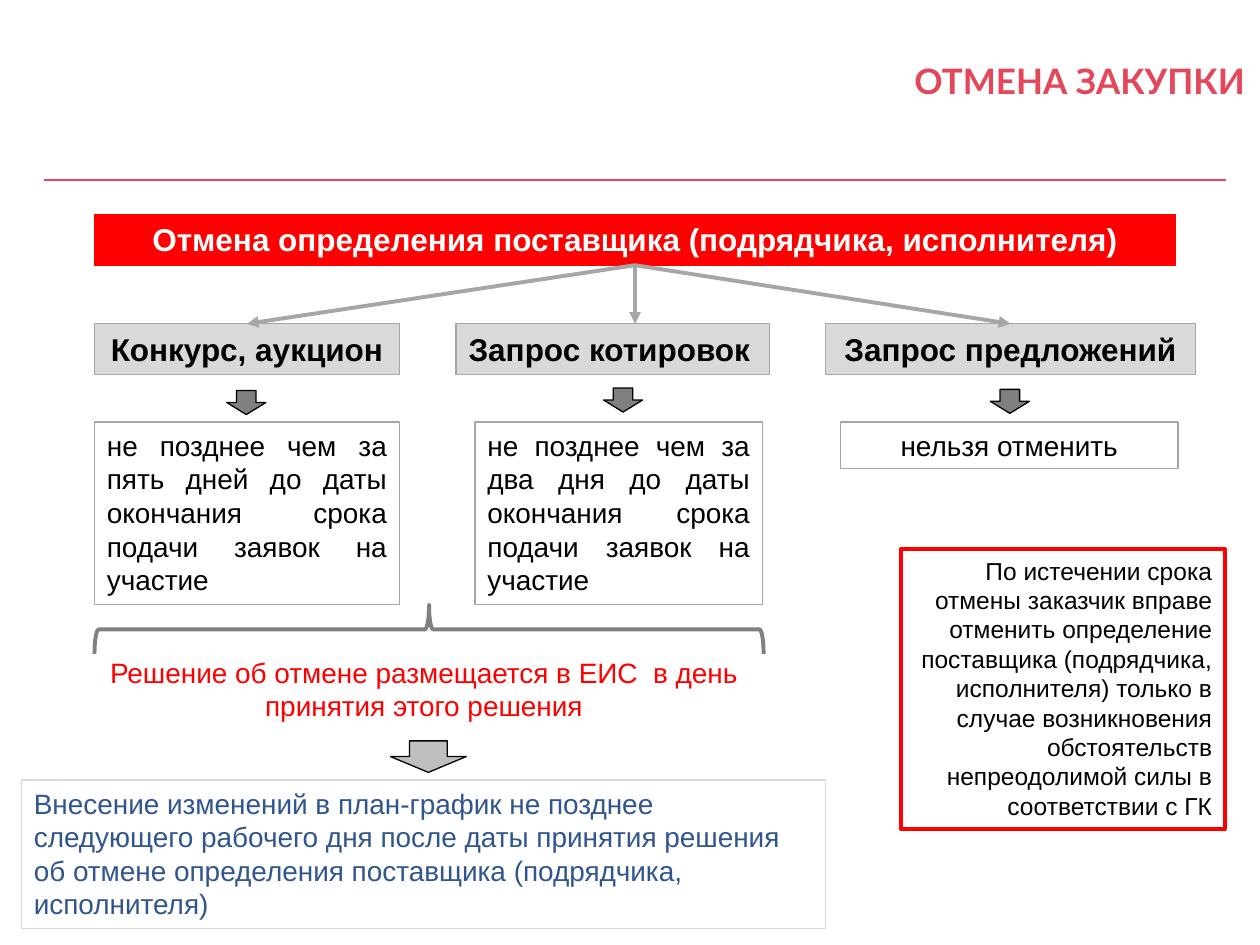
from dataclasses import dataclass

from lxml.etree import SubElement
from pptx import Presentation
from pptx.dml.color import RGBColor
from pptx.enum.shapes import MSO_CONNECTOR as Link, MSO_SHAPE as Form
from pptx.enum.text import MSO_ANCHOR as Anchor, PP_ALIGN as Align
from pptx.oxml.ns import qn
from pptx.util import Inches, Pt


@dataclass(frozen=True)
class Theme:
    """Colours, type sizes, fonts and line widths of the deck."""
    accent: str = "E4465A"
    red: str = "FF0000"
    blue: str = "31558F"
    white: str = "FFFFFF"
    black: str = "000000"
    pale: str = "D9D9D9"
    silver: str = "BFBFBF"
    edge: str = "A6A6A6"
    grey: str = "808080"
    title: int = 20
    heading: int = 18
    body: int = 16
    note: int = 14
    font: str = "Arial"
    title_font: str = "Lato"
    thin: float = 0.75
    rule: float = 1.5
    thick: float = 2.25


class Board:
    """Draws styled elements on one page laid out on a 100 by 75 grid."""

    def __init__(self, deck, theme):
        self.page = deck.slides.add_slide(deck.slide_layouts[6])
        self.theme = theme
        self.column = deck.slide_width / 100
        self.row = deck.slide_height / 75

    def place(self, left, top, width, height):
        """Turn grid lengths into slide lengths."""
        return (round(left * self.column), round(top * self.row),
                round(width * self.column), round(height * self.row))

    def shape(self, form, area, fill=None, line=None, weight=None):
        """Add a flat preset shape."""
        shape = self.page.shapes.add_shape(form, *self.place(*area))
        shape.shadow.inherit = False
        if fill:
            shape.fill.solid()
            shape.fill.fore_color.rgb = RGBColor.from_string(fill)
        else:
            shape.fill.background()
        if line:
            shape.line.color.rgb = RGBColor.from_string(line)
            shape.line.width = Pt(weight or self.theme.thin)
        else:
            shape.line.fill.background()
        return shape

    def set_text(self, box, text, size, color, align=Align.LEFT, bold=False, font=None):
        """Fill a box with one paragraph of text."""
        frame = box.text_frame
        frame.word_wrap = True
        frame.vertical_anchor = Anchor.TOP
        para = frame.paragraphs[0]
        para.text = text
        para.alignment = align
        para.font.size = Pt(size)
        para.font.bold = bold
        para.font.name = font or self.theme.font
        para.font.color.rgb = RGBColor.from_string(color)
        return para

    def box(self, area, text, size, color, align=Align.LEFT, bold=False,
            fill=None, line=None, weight=None):
        """Add a rectangle with text."""
        box = self.shape(Form.RECTANGLE, area, fill, line, weight)
        self.set_text(box, text, size, color, align, bold)
        return box

    def label(self, area, text, size, color, align, bold=False, font=None):
        """Add a plain text box."""
        box = self.page.shapes.add_textbox(*self.place(*area))
        return self.set_text(box, text, size, color, align, bold, font)

    def line(self, start, end, color, weight, arrow=False):
        """Add a straight line, with an arrowhead on request."""
        line = self.page.shapes.add_connector(
            Link.STRAIGHT, *self.place(*start, *end))
        line.line.color.rgb = RGBColor.from_string(color)
        line.line.width = Pt(weight)
        if arrow:
            SubElement(line.line._get_or_add_ln(), qn("a:tailEnd"), type="triangle")
        SubElement(line._element.spPr, qn("a:effectLst"))
        return line

    def arrow(self, area, fill):
        """Add a block arrow pointing down."""
        self.shape(Form.DOWN_ARROW, area, fill, self.theme.black)

    def brace(self, left, top, width, height, color, weight):
        """Add a brace lying on its side, with its tip up."""
        area = (left + (width - height) / 2, top + (height - width) / 2, height, width)
        self.shape(Form.LEFT_BRACE, area, None, color, weight).rotation = 90


def main():
    """Build the slide and save it."""
    deck = Presentation()
    deck.slide_width, deck.slide_height = Inches(10), Inches(7.5)
    theme = Theme()
    board = Board(deck, theme)

    board.line((3.5, 14.3), (97.3, 14.3), theme.accent, theme.rule)
    title = board.label((28.2, 3.6, 71.6, 9.9), "ОТМЕНА ЗАКУПКИ", theme.title,
                        theme.accent, Align.RIGHT, True, theme.title_font)
    title.line_spacing = 1.2
    banner = board.box((7.5, 17, 85.8, 4.05),
                       "Отмена определения поставщика (подрядчика, исполнителя)",
                       theme.heading, theme.white, Align.CENTER, True,
                       theme.red, theme.red)

    term = "не позднее чем за {} до даты окончания срока подачи заявок на участие"
    branches = [
        ("Конкурс, аукцион", 7.5, 24.2, Align.CENTER, 19.6, 18, 31,
         term.format("пять дней"), (7.5, 33.5, 24.2, 14.5), Align.JUSTIFY),
        ("Запрос котировок", 36.2, 24.9, Align.JUSTIFY, 50.4, 47.9, 30.8,
         term.format("два дня"), (37.7, 33.5, 22.8, 14.5), Align.JUSTIFY),
        ("Запрос предложений", 65.5, 29.4, Align.CENTER, 80.2, 78.6, 30.9,
         "нельзя отменить", (66.7, 33.5, 26.8, 3.7), Align.CENTER),
    ]
    for (name, left, width, align, target, arrow_left, arrow_top,
         rule, rule_area, rule_align) in branches:
        head = board.box((left, 25.7, width, 4.05), name, theme.heading, theme.black,
                         align, True, theme.pale, theme.edge)
        board.box(rule_area, rule, theme.body, theme.black, rule_align, line=theme.edge)
        board.arrow((arrow_left, arrow_top, 3.1, 1.9), theme.grey)
        link = board.line((50.4, 21.05), (target, 25.7), theme.edge, theme.thick, True)
        link.begin_connect(banner, 2)
        if abs(left + width / 2 - target) < 0.1:
            link.end_connect(head, 0)

    board.brace(7.5, 48, 53.1, 3.9, theme.grey, theme.thick)
    board.label((6.7, 51.5, 53.9, 6.4),
                "Решение об отмене размещается в ЕИС  в день принятия этого решения",
                theme.body, theme.red, Align.CENTER)
    board.arrow((31, 58.8, 6, 2.5), theme.silver)
    board.box((1.7, 61.9, 63.8, 11.8),
              "Внесение изменений в план-график не позднее следующего рабочего дня "
              "после даты принятия решения об отмене определения поставщика "
              "(подрядчика, исполнителя)",
              theme.body, theme.blue, line=theme.pale)
    board.box((71.5, 43.6, 25.7, 22.2),
              "По истечении срока отмены заказчик вправе отменить определение "
              "поставщика (подрядчика, исполнителя) только в случае возникновения "
              "обстоятельств непреодолимой силы в соответствии с ГК",
              theme.note, theme.black, Align.RIGHT, line=theme.red, weight=theme.thick)

    deck.save("out.pptx")


if __name__ == "__main__":
    main()
